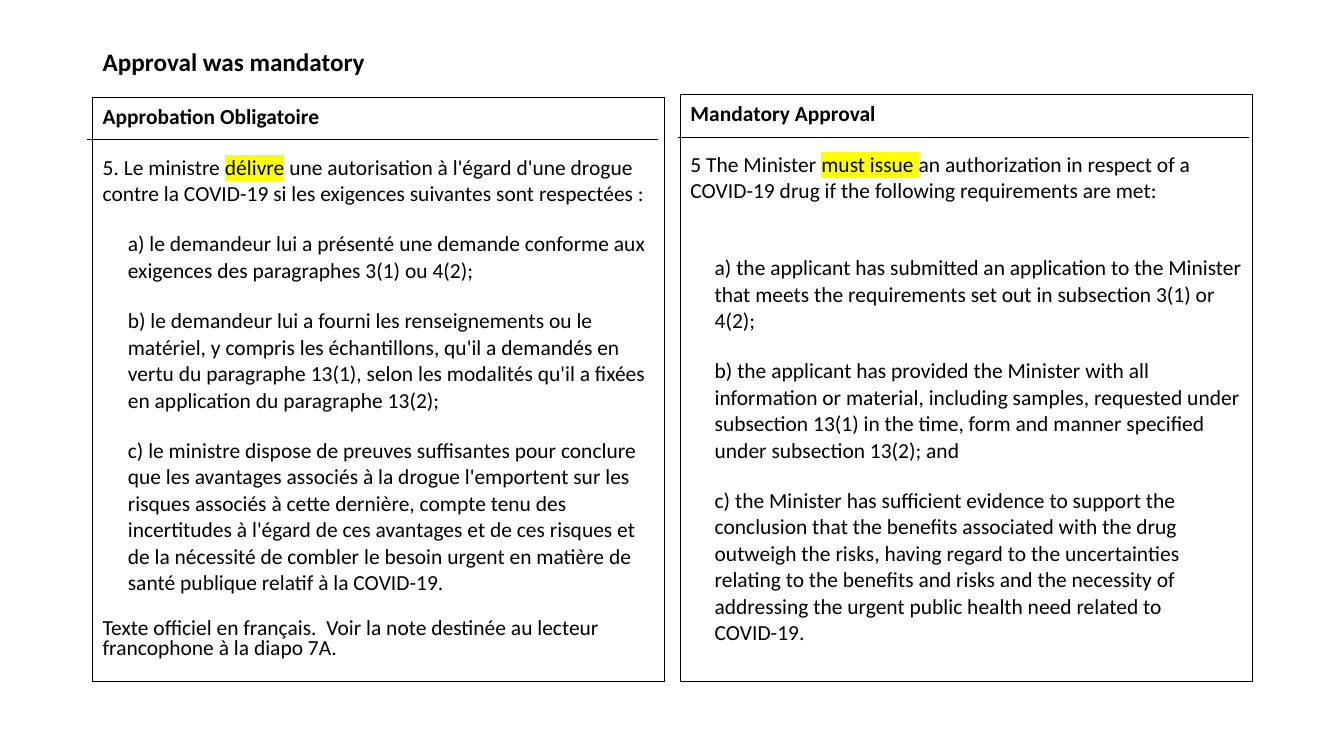
from lxml.etree import SubElement
from pptx import Presentation
from pptx.dml.color import RGBColor
from pptx.enum.shapes import MSO_CONNECTOR as CONNECTOR, MSO_SHAPE as SHAPE
from pptx.enum.text import MSO_ANCHOR as ANCHOR, PP_ALIGN as ALIGN
from pptx.oxml.ns import qn
from pptx.util import Inches, Pt

BLACK = RGBColor(0x00, 0x00, 0x00)
YELLOW = RGBColor(0xFF, 0xFF, 0x00)
FONT = "Calibri"
TITLE_SIZE = 18
BODY_SIZE = 15.3
PANEL_WIDTH = 5.67
PANEL_BOTTOM = 6.76

FRENCH_HEADING = "Approbation Obligatoire"
FRENCH_RULE = (
    "5. Le ministre ",
    "délivre",
    " une autorisation à l'égard d'une drogue contre la COVID-19 si les exigences "
    "suivantes sont respectées :",
)
FRENCH_CONDITIONS = [
    "a) le demandeur lui a présenté une demande conforme aux exigences des "
    "paragraphes 3(1) ou 4(2);",
    "b) le demandeur lui a fourni les renseignements ou le matériel, y compris les "
    "échantillons, qu'il a demandés en vertu du paragraphe 13(1), selon les "
    "modalités qu'il a fixées en application du paragraphe 13(2);",
    "c) le ministre dispose de preuves suffisantes pour conclure que les avantages "
    "associés à la drogue l'emportent sur les risques associés à cette dernière, "
    "compte tenu des incertitudes à l'égard de ces avantages et de ces risques et "
    "de la nécessité de combler le besoin urgent en matière de santé publique "
    "relatif à la COVID-19.",
]
FRENCH_NOTE = (
    "Texte officiel en français.  Voir la note destinée au lecteur francophone "
    "à la diapo 7A."
)
ENGLISH_HEADING = "Mandatory Approval"
ENGLISH_RULE = (
    "5 The Minister ",
    "must issue ",
    "an authorization in respect of a COVID-19 drug if the following requirements "
    "are met:",
)
ENGLISH_CONDITIONS = [
    "a) the applicant has submitted an application to the Minister that meets the "
    "requirements set out in subsection 3(1) or 4(2);",
    "b) the applicant has provided the Minister with all information or material, "
    "including samples, requested under subsection 13(1) in the time, form and "
    "manner specified under subsection 13(2); and",
    "c) the Minister has sufficient evidence to support the conclusion that the "
    "benefits associated with the drug outweigh the risks, having regard to the "
    "uncertainties relating to the benefits and risks and the necessity of "
    "addressing the urgent public health need related to COVID-19.",
]


def add_run(paragraph, text, size=BODY_SIZE, bold=False, highlight=None):
    run = paragraph.add_run()
    run.text = text
    run.font.size = Pt(size)
    run.font.bold = bold
    run.font.color.rgb = BLACK
    if highlight is not None:
        mark = SubElement(run.font._element, qn("a:highlight"))
        SubElement(mark, qn("a:srgbClr"), val=str(highlight))
    run.font.name = FONT


def add_paragraph(frame, indent=0, before=10, after=7, spacing=1.03):
    first = frame.paragraphs[0]
    paragraph = frame.add_paragraph() if first.runs else first
    paragraph.alignment = ALIGN.LEFT
    paragraph.line_spacing = spacing
    paragraph.space_before = Pt(before)
    paragraph.space_after = Pt(after)
    if indent:
        paragraph._p.get_or_add_pPr().set("marL", str(Inches(indent)))
    return paragraph


def add_title(slide, text):
    title = slide.shapes.add_textbox(
        Inches(0.92), Inches(0.4), Inches(11.5), Inches(0.46)
    )
    frame = title.text_frame
    frame.word_wrap = True
    frame.vertical_anchor = ANCHOR.MIDDLE
    paragraph = add_paragraph(frame, before=0, after=0, spacing=0.9)
    add_run(paragraph, text, TITLE_SIZE, bold=True)


def add_panel(slide, left, top, heading, rule, conditions, indent, first_gap=10):
    panel = slide.shapes.add_shape(
        SHAPE.RECTANGLE,
        Inches(left), Inches(top), Inches(PANEL_WIDTH), Inches(PANEL_BOTTOM - top),
    )
    panel.shadow.inherit = False
    panel.fill.background()
    panel.line.color.rgb = BLACK
    panel.line.width = Pt(0.75)
    frame = panel.text_frame
    frame.word_wrap = True
    frame.vertical_anchor = ANCHOR.TOP
    add_run(add_paragraph(frame), heading, bold=True)
    opening, key_words, ending = rule
    sentence = add_paragraph(frame)
    add_run(sentence, opening)
    add_run(sentence, key_words, highlight=YELLOW)
    add_run(sentence, ending)
    for number, condition in enumerate(conditions):
        before = 10 if number else first_gap
        add_run(add_paragraph(frame, indent, before), condition)
    return frame


def add_heading_rule(slide, left, y):
    divider = slide.shapes.add_connector(
        CONNECTOR.STRAIGHT,
        Inches(left), Inches(y), Inches(left + PANEL_WIDTH), Inches(y),
    )
    divider.line.color.rgb = BLACK
    divider.line.width = Pt(0.5)
    SubElement(divider._element.spPr, qn("a:effectLst"))


def main():
    deck = Presentation()
    deck.slide_width = Inches(13.33)
    deck.slide_height = Inches(7.5)
    slide = deck.slides.add_slide(deck.slide_layouts[6])

    add_title(slide, "Approval was mandatory")
    french = add_panel(
        slide, 0.92, 0.97, FRENCH_HEADING, FRENCH_RULE, FRENCH_CONDITIONS, 0.25
    )
    add_run(add_paragraph(french, after=0, spacing=0.8), FRENCH_NOTE)
    add_panel(
        slide, 6.75, 0.94, ENGLISH_HEADING, ENGLISH_RULE, ENGLISH_CONDITIONS, 0.24,
        first_gap=29,
    )
    add_heading_rule(slide, 6.72, 1.36)
    add_heading_rule(slide, 0.86, 1.38)

    deck.save("out.pptx")


if __name__ == "__main__":
    main()
